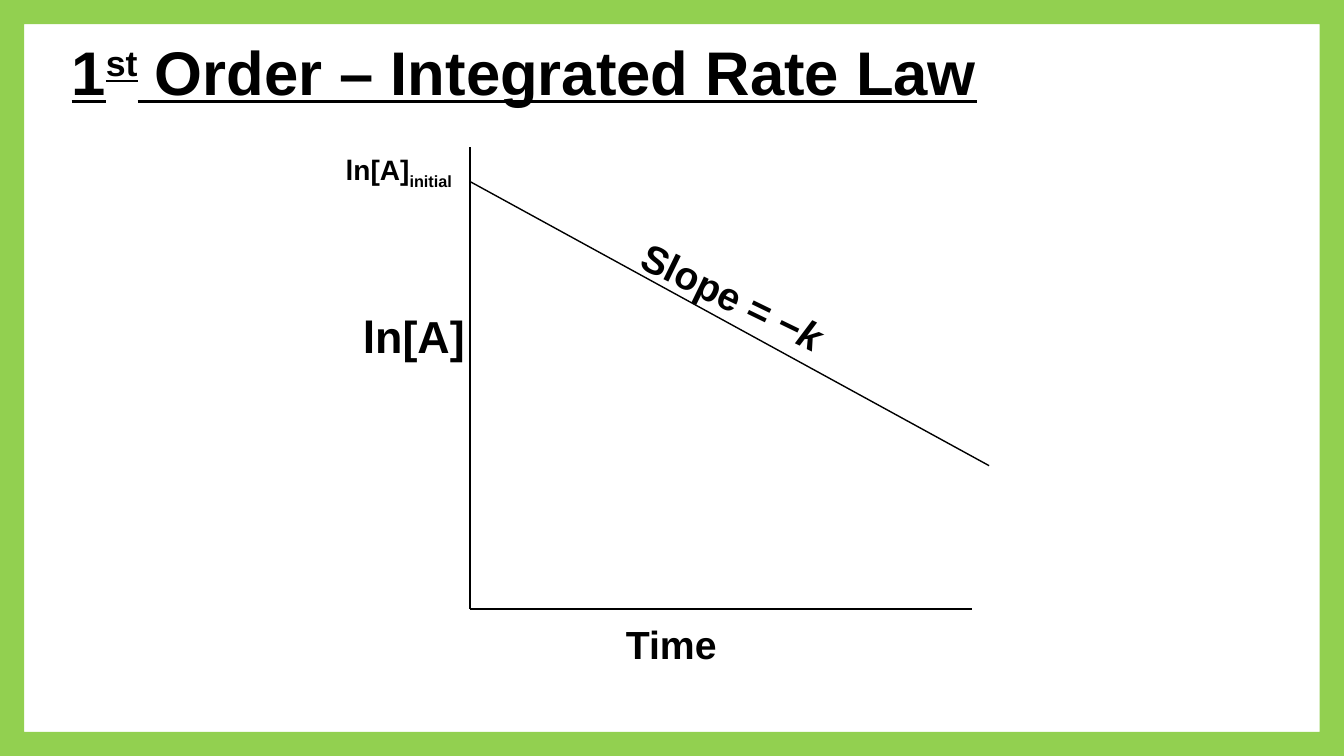
from lxml import etree
from pptx import Presentation
from pptx.dml.color import RGBColor
from pptx.enum.shapes import MSO_CONNECTOR, MSO_SHAPE
from pptx.enum.text import MSO_ANCHOR, MSO_AUTO_SIZE, PP_ALIGN
from pptx.oxml.ns import qn
from pptx.util import Inches, Pt

STRAIGHT = MSO_CONNECTOR.STRAIGHT
FRAME = MSO_SHAPE.FRAME
MIDDLE, TOP = MSO_ANCHOR.MIDDLE, MSO_ANCHOR.TOP
NO_FIT, GROW = MSO_AUTO_SIZE.NONE, MSO_AUTO_SIZE.SHAPE_TO_FIT_TEXT
LEFT = PP_ALIGN.LEFT

FONT = "Arial"
BLACK, GREEN = "000000", "92D050"
WIDTH, HEIGHT = 13.33, 7.5
BORDER_RATIO = 0.032

TITLE_BOX = (0.61, 0.23, 11.48, 0.94)
TITLE = [("1", {}), ("st", {"baseline": 30}), (" Order – Integrated Rate Law", {})]

ORIGIN = (4.66, 6.04)
AXIS_TOP, AXIS_RIGHT = 1.46, 9.64
INTERCEPT, LINE_END = 1.8, (9.81, 4.62)

LABELS = [
    ((3.33, 1.46, 1.33, 0.43), 20, 0, True, [("ln[A]", {}), ("initial", {"baseline": -25})]),
    ((3.5, 3.01, 1.22, 0.64), 32, 0, False, [("ln[A]", {})]),
    ((6.11, 6.1, 1.11, 0.57), 28, 0, False, [("Time", {})]),
    ((6.19, 2.68, 2.25, 0.57), 28, 26, False, [("Slope = −", {}), ("k", {"italic": True})]),
]


def color(hex_code):
    return RGBColor.from_string(hex_code)


def inches(values):
    return [Inches(value) for value in values]


def write(text_frame, runs, size, anchor, fit, wrap, underline=None):
    text_frame.word_wrap = wrap
    text_frame.auto_size = fit
    text_frame.vertical_anchor = anchor
    text_frame.margin_left = text_frame.margin_right = Inches(0.1)
    text_frame.margin_top = text_frame.margin_bottom = Inches(0.05)
    paragraph = text_frame.paragraphs[0]
    paragraph.alignment = LEFT
    for text, style in runs:
        run = paragraph.add_run()
        run.text = text
        run.font.name = FONT
        run.font.size = Pt(size)
        run.font.bold = True
        run.font.italic = style.get("italic")
        run.font.underline = underline
        run.font.color.rgb = color(BLACK)
        if "baseline" in style:
            run._r.get_or_add_rPr().set("baseline", str(style["baseline"] * 1000))


def draw_line(slide, start, end):
    line = slide.shapes.add_connector(STRAIGHT, *inches(start + end))
    line.line.color.rgb = color(BLACK)
    line.line.width = Pt(1)
    etree.SubElement(line._element.spPr, qn("a:effectLst"))


def main():
    deck = Presentation()
    deck.slide_width, deck.slide_height = inches((WIDTH, HEIGHT))
    slide = deck.slides.add_slide(deck.slide_layouts[5])

    title = slide.shapes.title
    title.left, title.top, title.width, title.height = inches(TITLE_BOX)
    write(title.text_frame, TITLE, 44, MIDDLE, NO_FIT, True, underline=True)

    origin_x, origin_y = ORIGIN
    draw_line(slide, (origin_x, AXIS_TOP), ORIGIN)
    draw_line(slide, ORIGIN, (AXIS_RIGHT, origin_y))
    draw_line(slide, (origin_x, INTERCEPT), LINE_END)

    for box, size, angle, wrap, runs in LABELS:
        label = slide.shapes.add_textbox(*inches(box))
        label.rotation = angle
        write(label.text_frame, runs, size, TOP, GROW, wrap)

    border = slide.shapes.add_shape(FRAME, *inches((0, 0, WIDTH, HEIGHT)))
    border.adjustments[0] = BORDER_RATIO
    border.shadow.inherit = False
    border.fill.solid()
    border.fill.fore_color.rgb = color(GREEN)
    border.line.fill.background()

    deck.save("out.pptx")


if __name__ == "__main__":
    main()
